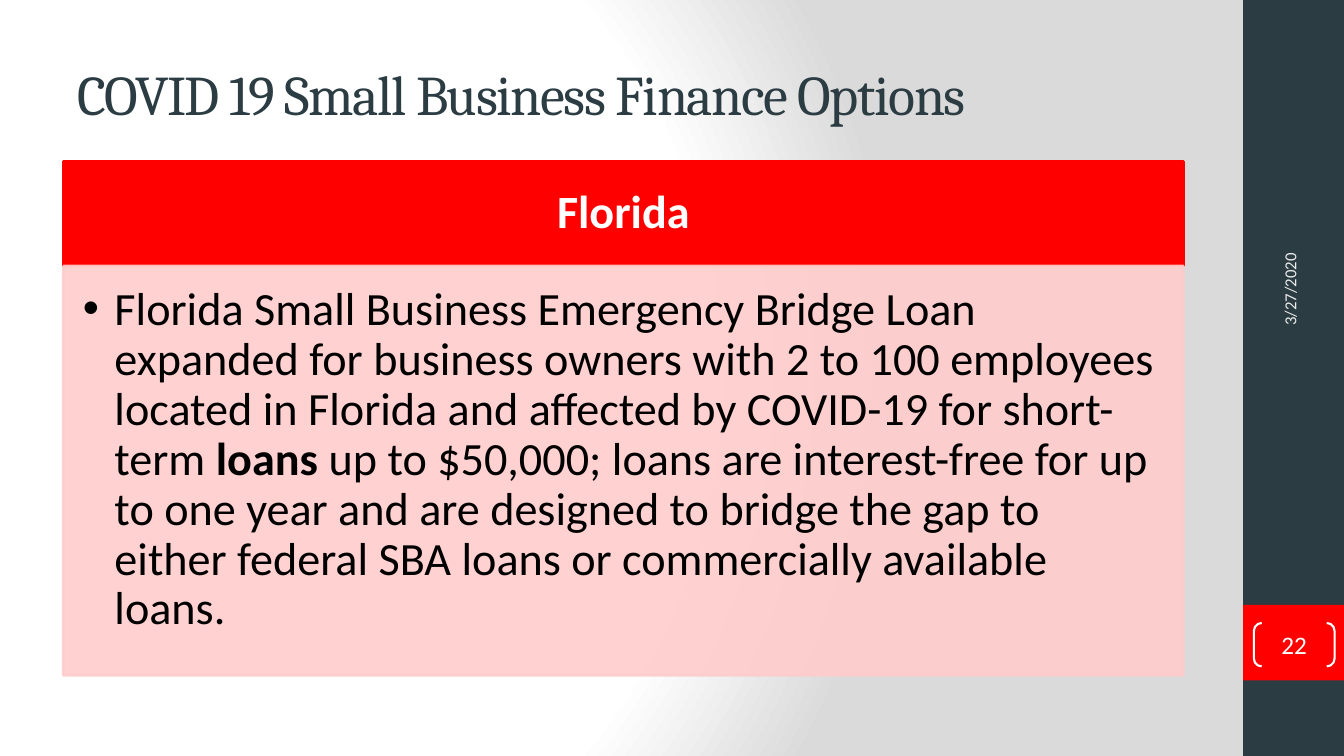
from lxml import etree
from pptx import Presentation
from pptx import oxml
from pptx.dml.color import RGBColor
from pptx.enum import shapes, text
from pptx.oxml.ns import nsdecls, qn
from pptx.util import Pt

COLORS = {
    "slate": "2C3C43", "red": "FF0000", "pink": "FFCCCC", "white": "FFFFFF",
    "grey": "DADADA", "date": "EBEBEB", "black": "000000",
}
CARD_LEFT, CARD_TOP, CARD_WIDTH = 45.3, 115.2, 800
HEADER_HEIGHT, BODY_HEIGHT = 74.9, 292.3
BAR_LEFT, BAR_WIDTH = 888, 72


def rgb(name):
    return RGBColor.from_string(COLORS[name])


def set_background(s):
    """Radial gradient, white in the middle and grey outside."""
    s.background.fill.gradient()
    old = s._element.find(".//" + qn("a:gradFill"))
    stops = "".join(
        f'<a:gs pos="{pos * 1000}"><a:srgbClr val="{COLORS[name]}"/></a:gs>'
        for pos, name in ((0, "white"), (75, "white"), (100, "grey")))
    new = oxml.parse_xml(
        f'<a:gradFill {nsdecls("a")} rotWithShape="1"><a:gsLst>{stops}</a:gsLst>'
        '<a:path path="circle"><a:fillToRect l="20000" t="50000" r="100000" b="50000"/>'
        '</a:path></a:gradFill>')
    old.getparent().replace(old, new)


def add_box(s, kind, box, fill=None, line=None, line_width=2, alpha=None):
    sp = s.shapes.add_shape(kind, *map(Pt, box))
    sp.shadow.inherit = False
    if fill:
        sp.fill.solid()
        sp.fill.fore_color.rgb = rgb(fill)
    else:
        sp.fill.background()
    if line:
        sp.line.color.rgb = rgb(line)
        sp.line.width = Pt(line_width)
    else:
        sp.line.fill.background()
    if alpha:
        for color in sp._element.spPr.iter(qn("a:srgbClr")):
            etree.SubElement(color, qn("a:alpha"), val=str(alpha * 1000))
    return sp


def add_text_box(s, box):
    return s.shapes.add_textbox(*map(Pt, box))


def add_bullet(p, indent):
    pPr = p._p.get_or_add_pPr()
    pPr.set("marL", str(Pt(indent)))
    pPr.set("indent", str(-Pt(indent)))
    etree.SubElement(pPr, qn("a:buFont"), typeface="Arial")
    etree.SubElement(pPr, qn("a:buChar"), char="•")


def write(sp, runs, size, color, font="Calibri", align=text.PP_ALIGN.LEFT,
          anchor=text.MSO_ANCHOR.MIDDLE, insets=(7.2, 3.6, 7.2, 3.6),
          line_spacing=1.0, bullet_indent=None, tracking=None):
    """Fill a shape with one paragraph made of (wording, bold) runs."""
    tf = sp.text_frame
    tf.word_wrap = True
    tf.vertical_anchor = anchor
    tf.margin_left, tf.margin_top, tf.margin_right, tf.margin_bottom = map(Pt, insets)
    p = tf.paragraphs[0]
    p.alignment = align
    p.line_spacing = line_spacing
    if bullet_indent:
        add_bullet(p, bullet_indent)
    for wording, bold in runs:
        r = p.add_run()
        r.text = wording
        r.font.name, r.font.size, r.font.bold = font, Pt(size), bold
        r.font.color.rgb = rgb(color)
        if tracking:
            r._r.get_or_add_rPr().set("spc", str(tracking * 100))


def add_sidebar(s):
    rect = shapes.MSO_SHAPE.RECTANGLE
    add_box(s, rect, (BAR_LEFT, 0, BAR_WIDTH, 540), "slate")
    add_box(s, rect, (BAR_LEFT, 432, BAR_WIDTH, 54), "red")
    date = add_text_box(s, (825.1, 124.6, 192.2, 38.2))
    date.rotation = 270
    write(date, [("3/27/2020", False)], 12, "date")
    number = add_box(s, shapes.MSO_SHAPE.DOUBLE_BRACKET, (895.7, 445, 57.6, 31),
                     line="white", line_width=1.5)
    number.adjustments[0] = 0.18
    write(number, [("22", False)], 18, "white", align=text.PP_ALIGN.CENTER,
          insets=(0, 0, 0, 0))


def add_card(s, heading, body_runs):
    rect = shapes.MSO_SHAPE.RECTANGLE
    header = add_box(s, rect, (CARD_LEFT, CARD_TOP, CARD_WIDTH, HEADER_HEIGHT),
                     "red", "red")
    write(header, [(heading, True)], 33, "white", align=text.PP_ALIGN.CENTER,
          insets=(18.7, 10.8, 18.7, 10.8), line_spacing=0.9)
    body = add_box(s, rect, (CARD_LEFT, CARD_TOP + HEADER_HEIGHT, CARD_WIDTH, BODY_HEIGHT),
                   "pink", "pink", alpha=90)
    write(body, body_runs, 33, "black", anchor=text.MSO_ANCHOR.TOP,
          insets=(14, 14, 18.7, 21), line_spacing=0.9, bullet_indent=22.5)


def main():
    prs = Presentation()
    prs.slide_width, prs.slide_height = Pt(960), Pt(540)
    s = prs.slides.add_slide(prs.slide_layouts[6])
    set_background(s)
    add_sidebar(s)
    title = add_text_box(s, (48, 21.6, 800, 90))
    write(title, [("COVID 19 Small Business Finance Options", False)], 40, "slate",
          font="Cambria", tracking=-1)
    add_card(s, "Florida", [
        ("Florida Small Business Emergency Bridge Loan expanded for business owners "
         "with 2 to 100 employees located in Florida and affected by COVID-19 for "
         "short-term ", False),
        ("loans", True),
        (" up to $50,000; loans are interest-free for up to one year and are designed "
         "to bridge the gap to either federal SBA loans or commercially available "
         "loans.", False),
    ])
    prs.save("out.pptx")


if __name__ == "__main__":
    main()
